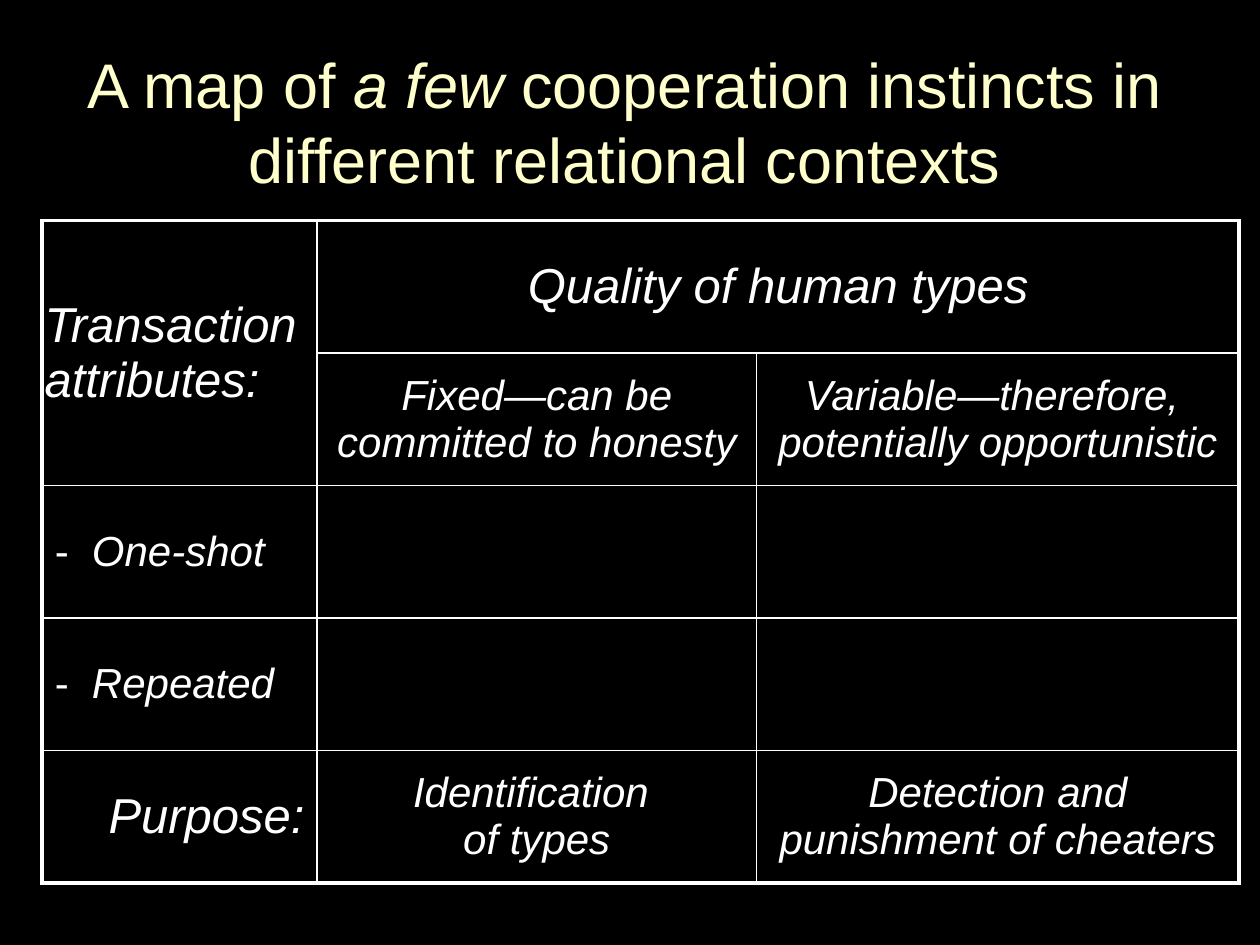
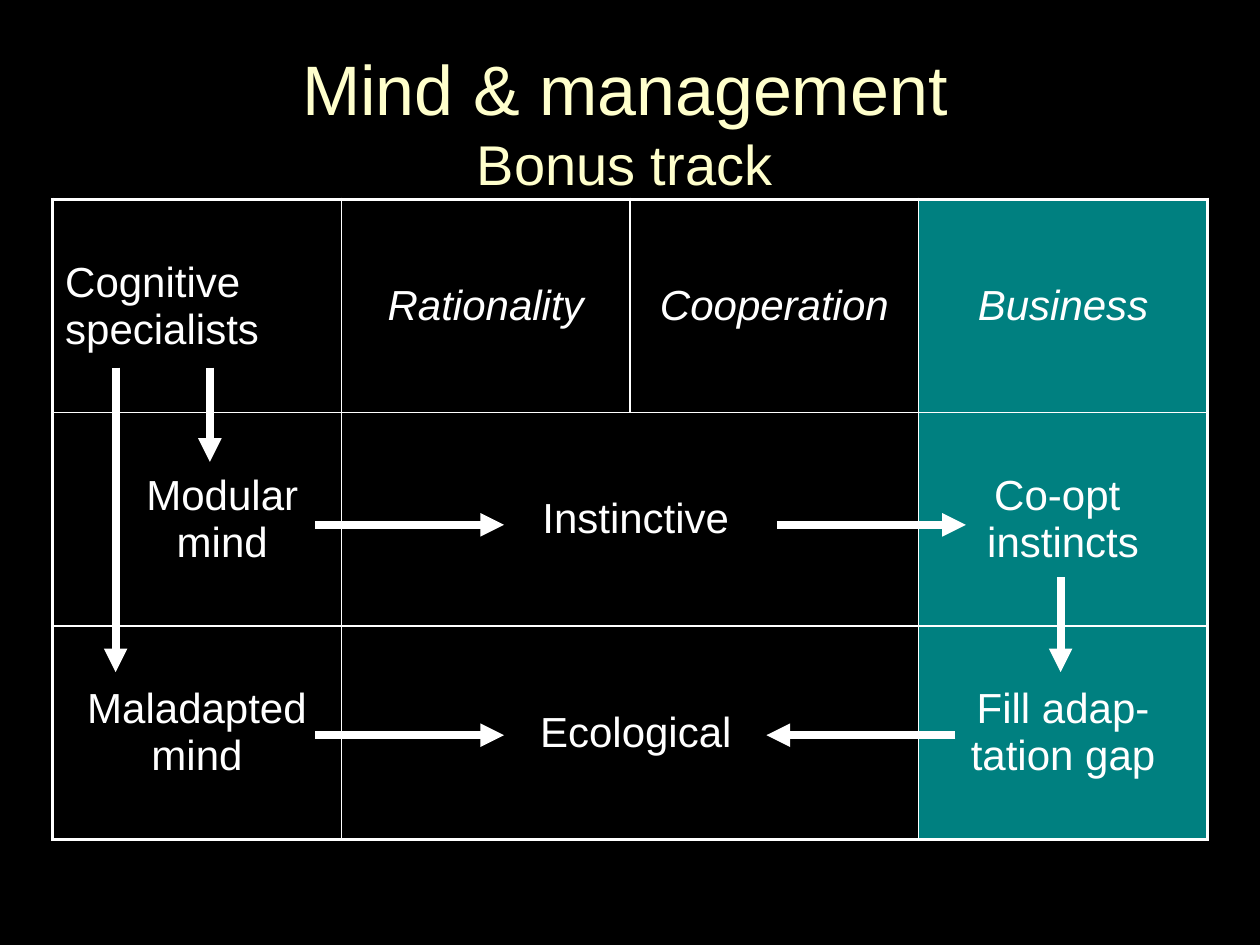
import copy

import pptx
import pptx.dml.color
import pptx.enum.shapes
import pptx.enum.text
import pptx.oxml
import pptx.oxml.ns
import pptx.util

Cm = pptx.util.Cm
Pt = pptx.util.Pt
ALIGN = pptx.enum.text.PP_ALIGN
MIDDLE = pptx.enum.text.MSO_ANCHOR.MIDDLE
FONT = "Arial"
BLACK, WHITE, CREAM, TEAL = "000000", "FFFFFF", "FFFFCC", "008080"
OUTER, INNER, ARROW = 2.25, 1, 4.5


def rgb(color):
    return pptx.dml.color.RGBColor.from_string(color)


def add_xml(parent, tag, inner="", **attrs):
    """Append a DrawingML element, such as a border or bullet, to parent."""
    listed = "".join(f' {name}="{value}"' for name, value in attrs.items())
    ns = pptx.oxml.ns.nsdecls("a")
    parent.append(pptx.oxml.parse_xml(f"<a:{tag} {ns}{listed}>{inner}</a:{tag}>"))


def write(p, text, size=24, color=WHITE, italic=False):
    """Add text to a paragraph; a newline becomes a line break of the same format."""
    for i, line in enumerate(text.split("\n")):
        if i:
            p.add_line_break()
            p._p[-1].append(copy.deepcopy(r._r.rPr))
        r = p.add_run()
        r.text = line
        r.font.name = FONT
        r.font.size = Pt(size)
        r.font.italic = italic
        r.font.color.rgb = rgb(color)


def add_slide(prs, left, width, title):
    """Add a slide whose title is a list of (text, format) pieces."""
    slide = prs.slides.add_slide(prs.slide_layouts[5])
    sp = slide.shapes.title
    sp.left, sp.top, sp.width, sp.height = Cm(left), Cm(1.06), Cm(width), Cm(2.75)
    tf = sp.text_frame
    tf.auto_size = pptx.enum.text.MSO_AUTO_SIZE.NONE
    tf.word_wrap = True
    tf.vertical_anchor = MIDDLE
    p = tf.paragraphs[0]
    p.alignment = ALIGN.CENTER
    for text, fmt in title:
        write(p, text, color=CREAM, **fmt)
    return slide


def fill_cell(cell, text, align=ALIGN.CENTER, inset=None, dash=False, **fmt):
    """Write a cell; inset gives the left and right margins in cm."""
    if inset:
        cell.margin_left, cell.margin_right = map(Cm, inset)
    p = cell.text_frame.paragraphs[0]
    p.alignment = align
    if dash:
        pPr = p._p.get_or_add_pPr()
        pPr.set("marL", str(Cm(0.75)))
        pPr.set("indent", str(-Cm(0.75)))
        add_xml(pPr, "buFont", typeface=FONT)
        add_xml(pPr, "buChar", char="-")
    write(p, text, **fmt)


def draw_borders(cell, edges):
    """Draw the four sides, heavy where the side lies on the table's edge."""
    solid = f'<a:solidFill><a:srgbClr val="{WHITE}"/></a:solidFill>'
    for side, on_edge in edges.items():
        width = Pt(OUTER if on_edge else INNER)
        add_xml(cell._tc.get_or_add_tcPr(), "ln" + side, solid, w=width)


def add_grid(slide, left, top, widths, row_height, rows, merges, teal_column=None):
    """Add a table; rows hold (text, format) pairs, or None for no text."""
    n_rows, n_cols = len(rows), len(widths)
    frame = slide.shapes.add_table(n_rows, n_cols, Cm(left), Cm(top),
                                   Cm(sum(widths)), Cm(row_height * n_rows))
    table = frame.table
    table.first_row = table.horz_banding = False
    for column, width in zip(table.columns, widths):
        column.width = Cm(width)
    for row in table.rows:
        row.height = Cm(row_height)
    for first, last in merges:
        table.cell(*first).merge(table.cell(*last))
    for i, row in enumerate(rows):
        for j, content in enumerate(row):
            cell = table.cell(i, j)
            if cell.is_spanned:
                continue
            cell.vertical_anchor = MIDDLE
            draw_borders(cell, {"L": j == 0, "R": j + cell.span_width == n_cols,
                                "T": i == 0, "B": i + cell.span_height == n_rows})
            cell.fill.solid()
            cell.fill.fore_color.rgb = rgb(TEAL if j == teal_column else BLACK)
            if content:
                fill_cell(cell, content[0], **content[1])


def add_arrow(slide, x1, y1, x2, y2):
    line = slide.shapes.add_connector(pptx.enum.shapes.MSO_CONNECTOR.STRAIGHT,
                                      Cm(x1), Cm(y1), Cm(x2), Cm(y2))
    line.line.color.rgb = rgb(WHITE)
    line.line.width = Pt(ARROW)
    add_xml(line.line._get_or_add_ln(), "tailEnd", type="triangle")
    add_xml(line._element.spPr, "effectLst")


def build_instinct_map(prs):
    slide = add_slide(prs, 0.43, 24.33, [
        ("A map of ", dict(size=36)),
        ("a few", dict(size=36, italic=True)),
        (" cooperation instincts in different relational contexts", dict(size=36)),
    ])
    italic = dict(italic=True)
    narrow = dict(italic=True, inset=(0.1, 0.1))
    dash = dict(italic=True, align=ALIGN.LEFT, dash=True)
    rows = [
        [("Transaction \nattributes:",
          dict(italic=True, size=28, align=ALIGN.LEFT, inset=(0.05, 0.05))),
         ("Quality of human types", dict(narrow, size=28)), None],
        [None, ("Fixed—can be\ncommitted to honesty", narrow),
         ("Variable—therefore, \npotentially opportunistic", narrow)],
        [("One-shot", dash), None, None],
        [("Repeated", dash), None, None],
        [("Purpose:", dict(italic=True, size=28, align=ALIGN.RIGHT)),
         ("Identification \nof types", narrow),
         ("Detection and punishment of cheaters", italic)],
    ]
    add_grid(slide, 0.85, 4.45, [5.54, 8.86, 9.73], 2.67, rows,
             merges=[((0, 0), (1, 0)), ((0, 1), (0, 2))])


def build_mind_and_management(prs):
    slide = add_slide(prs, 1.06, 23.07, [
        ("Mind & management\n", dict(size=40)),
        ("Bonus track", dict(size=32)),
    ])
    plain, italic = {}, dict(italic=True)
    rows = [
        [("Cognitive specialists", dict(align=ALIGN.LEFT)), ("Rationality", italic),
         ("Cooperation", italic), ("Business", italic)],
        [("Modular mind", dict(inset=(1.27, 0.25))), (" Instinctive", plain), None,
         ("Co-opt \ninstincts", plain)],
        [("Maladapted mind", plain), (" Ecological", plain), None,
         ("Fill adap-\ntation gap", plain)],
    ]
    add_grid(slide, 1.06, 4.02, [5.82] * 4, 4.3, rows, teal_column=3,
             merges=[((i, 1), (i, 2)) for i in (1, 2)])

    instinctive_y, ecological_y = 10.58, 14.82
    specialists_y, maladapted_y = 7.41, 13.55
    for y in (ecological_y, instinctive_y):
        add_arrow(slide, 6.35, y, 10.16, y)
    add_arrow(slide, 15.66, instinctive_y, 19.47, instinctive_y)
    add_arrow(slide, 19.26, ecological_y, 15.45, ecological_y)
    add_arrow(slide, 2.33, specialists_y, 2.33, maladapted_y)
    add_arrow(slide, 4.23, specialists_y, 4.23, 9.31)
    add_arrow(slide, 21.38, 11.64, 21.38, maladapted_y)


def main():
    prs = pptx.Presentation()
    prs.slide_width, prs.slide_height = Cm(25.4), Cm(19.05)
    background = prs.slide_master.background.fill
    background.solid()
    background.fore_color.rgb = rgb(BLACK)
    build_instinct_map(prs)
    build_mind_and_management(prs)
    prs.save("out.pptx")


if __name__ == "__main__":
    main()
